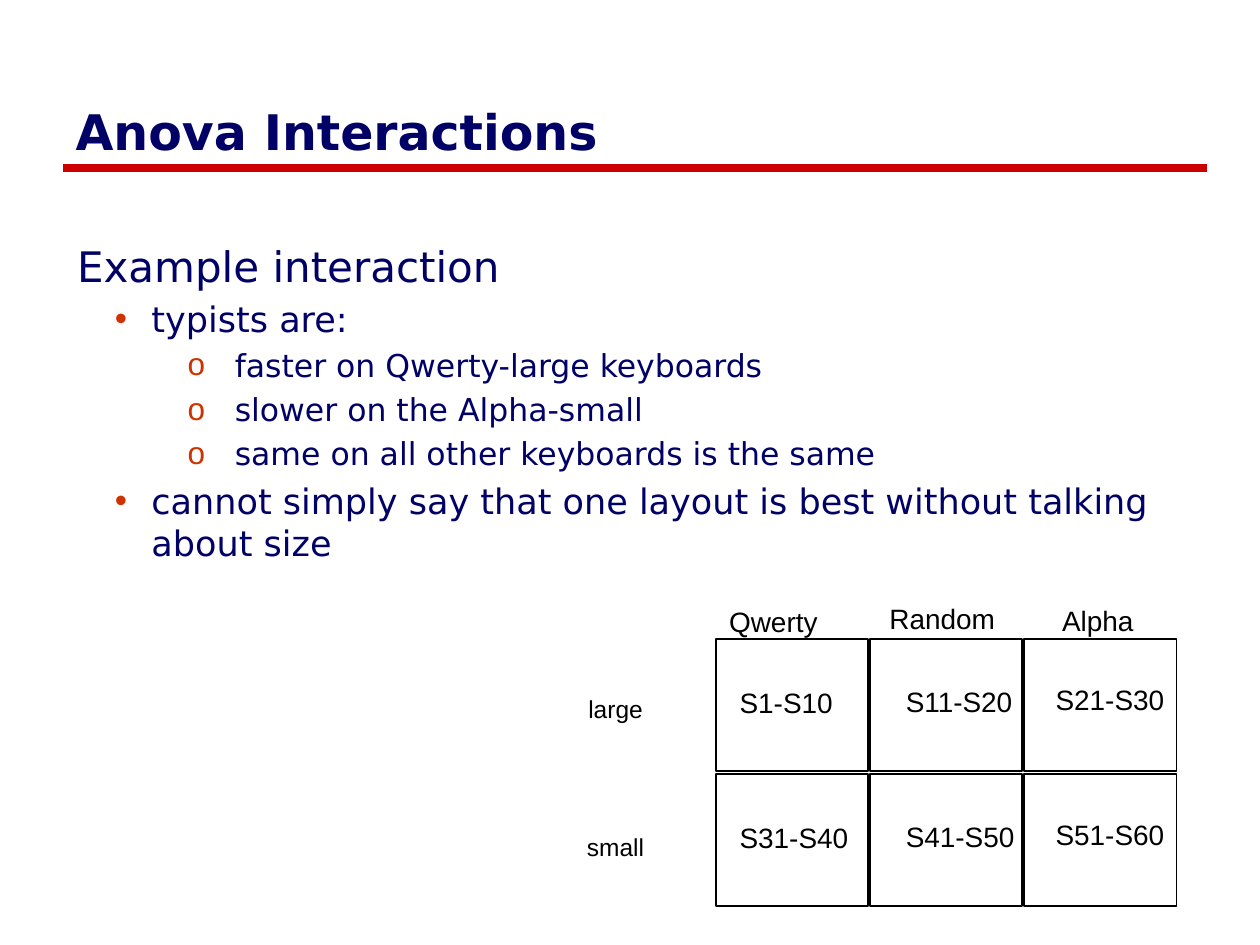
from lxml.etree import SubElement
from pptx import Presentation
from pptx.dml.color import RGBColor
from pptx.enum.shapes import MSO_CONNECTOR as Link, MSO_SHAPE as Shape
from pptx.enum.text import MSO_ANCHOR as Anchor, MSO_AUTO_SIZE as Fit, PP_ALIGN as Align
from pptx.oxml.ns import qn
from pptx.util import Cm, Pt

HUES = {"navy": "000066", "red": "CC0000", "rust": "CC3300", "black": "000000", "white": "FFFFFF"}
SANS, ARIAL = "DejaVu Sans", "Arial"

LEVELS = [
    (24, 0, 0, None),
    (20, 1.5, -0.74, "•"),
    (18, 3.18, -0.95, "o"),
]
POINTS = [
    (0, "Example interaction"),
    (1, "typists are:"),
    (2, "faster on Qwerty-large keyboards"),
    (2, "slower on the Alpha-small"),
    (2, "same on all other keyboards is the same"),
    (1, "cannot simply say that one layout is best without talking about size"),
]
HEADS = [("Qwerty", 14.45, 12.07, 2.29), ("Random", 17.68, 12.01, 2.67), ("Alpha", 21.16, 12.04, 1.96)]
SIDES = [("large", 11.61, 13.87, 1.63), ("small", 11.58, 16.64, 1.68)]
GROUPS = [
    [("S1-S10", 2.39), ("S11-S20", 2.72), ("S21-S30", 2.72)],
    [("S31-S40", 2.72), ("S41-S50", 2.72), ("S51-S60", 2.72)],
]
SPOTS = [(14.66, 13.69), (18.01, 13.67), (21.03, 13.64)]
LEFT, TOP, WIDE, HIGH = 14.43, 12.88, 3.07, 2.67
STEP, DROP = 3.11, 2.72


def hue(name):
    return RGBColor.from_string(HUES[name])


def style(para, size, face, tint, bold=False):
    para.alignment = Align.LEFT
    for run in para.runs:
        font = run.font
        font.size, font.name, font.bold = Pt(size), face, bold
        font.color.rgb = hue(tint)


def place(shape, left, top, width, height):
    shape.left, shape.top = Cm(left), Cm(top)
    shape.width, shape.height = Cm(width), Cm(height)


def set_title(slide, text):
    title = slide.shapes.title
    place(title, 1.27, 1.9, 23.06, 1.47)
    frame = title.text_frame
    frame.text = text
    frame.auto_size = Fit.NONE
    frame.vertical_anchor = Anchor.MIDDLE
    style(frame.paragraphs[0], 28, SANS, "navy", True)


def set_bullet(para, left, indent, mark):
    props = para._p.get_or_add_pPr()
    props.set("marL", str(Cm(left)))
    props.set("indent", str(Cm(indent)))
    if not mark:
        SubElement(props, qn("a:buNone"))
        return
    tint = SubElement(props, qn("a:buClr"))
    SubElement(tint, qn("a:srgbClr"), val=HUES["rust"])
    SubElement(props, qn("a:buFont"), typeface=ARIAL)
    SubElement(props, qn("a:buChar"), char=mark)


def set_body(slide, points):
    body = slide.placeholders[1]
    place(body, 1.3, 4.72, 23.01, 13.21)
    frame = body.text_frame
    frame.text = "\n".join(text for _, text in points)
    frame.auto_size = Fit.NONE
    for para, (level, _) in zip(frame.paragraphs, points):
        size, left, indent, mark = LEVELS[level]
        para.level = level
        style(para, size, SANS, "navy")
        set_bullet(para, left, indent, mark)


def add_rule(slide):
    rule = slide.shapes.add_connector(Link.STRAIGHT, Cm(1.27), Cm(3.38), Cm(24.33), Cm(3.38))
    rule.line.color.rgb = hue("red")
    rule.line.width = Pt(4.5)
    SubElement(rule._element.spPr, qn("a:effectLst"))


def add_cell(slide, left, top):
    cell = slide.shapes.add_shape(Shape.RECTANGLE, Cm(left), Cm(top), Cm(WIDE), Cm(HIGH))
    cell.shadow.inherit = False
    cell.fill.solid()
    cell.fill.fore_color.rgb = hue("white")
    cell.line.color.rgb = hue("black")
    cell.line.width = Pt(1)


def add_label(slide, text, left, top, width, height=0.94, size=16):
    box = slide.shapes.add_textbox(Cm(left), Cm(top), Cm(width), Cm(height))
    frame = box.text_frame
    frame.text = text
    frame.word_wrap = False
    frame.auto_size = Fit.SHAPE_TO_FIT_TEXT
    style(frame.paragraphs[0], size, ARIAL, "black")


def add_grid(slide):
    for row, groups in enumerate(GROUPS):
        for col in range(len(groups)):
            add_cell(slide, LEFT + col * STEP, TOP + row * DROP)
        for (text, width), (left, top) in zip(groups, SPOTS):
            add_label(slide, text, left, top + row * DROP, width)
    for head in HEADS:
        add_label(slide, *head)
    for side in SIDES:
        add_label(slide, *side, height=0.86, size=14)


def main():
    deck = Presentation()
    deck.slide_width, deck.slide_height = Cm(25.4), Cm(19.05)
    slide = deck.slides.add_slide(deck.slide_layouts[1])
    add_rule(slide)
    set_title(slide, "Anova Interactions")
    set_body(slide, POINTS)
    add_grid(slide)
    deck.save("out.pptx")


if __name__ == "__main__":
    main()
